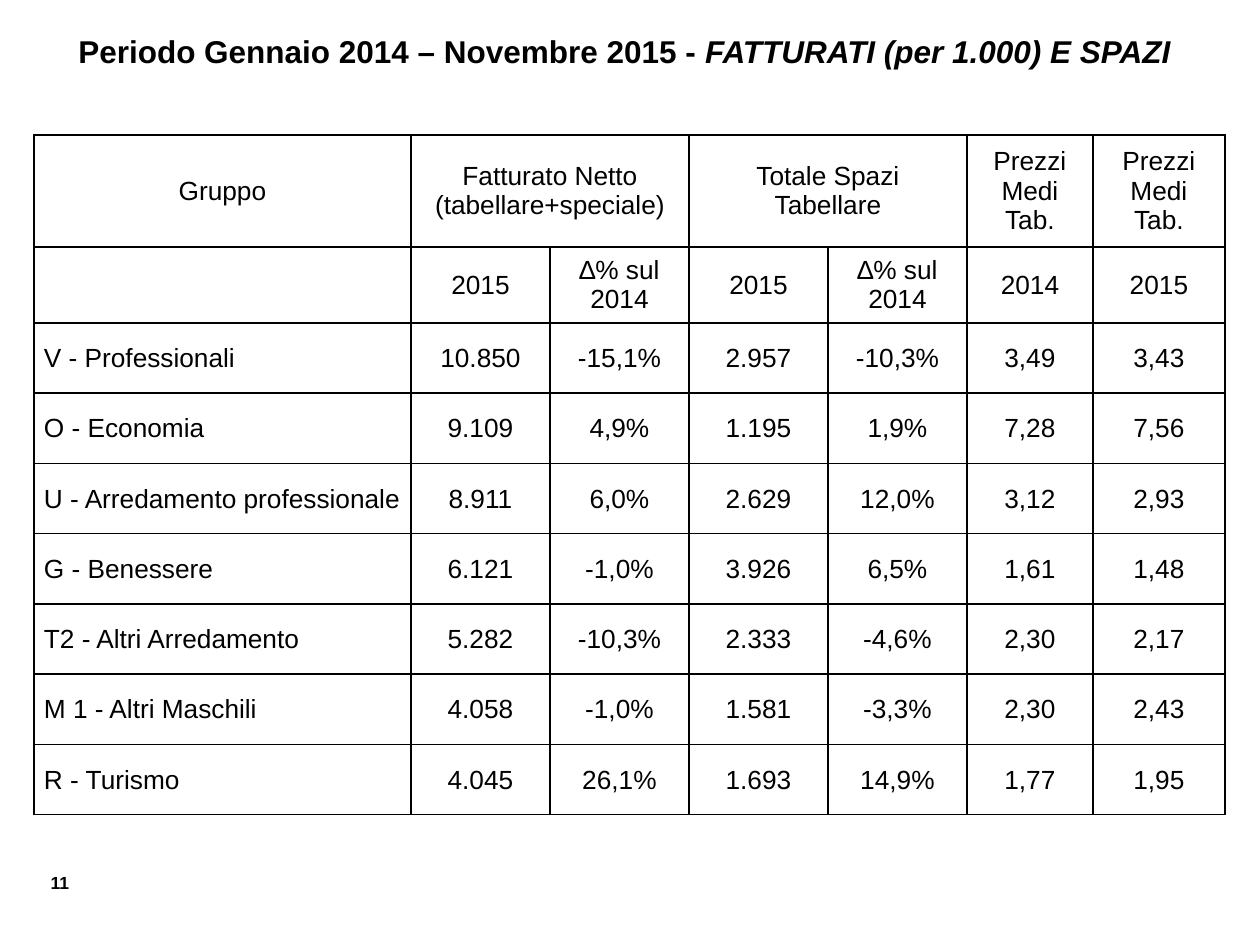
from dataclasses import dataclass

from lxml.etree import SubElement
from pptx import Presentation
from pptx.dml.color import RGBColor
from pptx.enum.text import MSO_ANCHOR, PP_ALIGN
from pptx.oxml.ns import qn
from pptx.util import Emu, Pt

PX_PER_INCH = 126
SLIDE_SIZE = (1260, 945)
TITLE_BOX = (34, 26, 1181, 89)
TABLE_BOX = (34, 135, 1191, 680)
NUMBER_BOX = (24, 866, 58, 34)

COLUMN_WIDTHS = [377, 139, 139, 139, 139, 126, 132]
HEADER_HEIGHTS = [112, 76]
HEADERS = [
    ["Gruppo", "Fatturato Netto (tabellare+speciale)", "", "Totale Spazi Tabellare", "",
     "Prezzi Medi Tab.", "Prezzi Medi Tab."],
    ["", "2015", "∆% sul 2014", "2015", "∆% sul 2014", "2014", "2015"],
]
GROUPS = [
    ["V - Professionali", "10.850", "-15,1%", "2.957", "-10,3%", "3,49", "3,43"],
    ["O - Economia", "9.109", "4,9%", "1.195", "1,9%", "7,28", "7,56"],
    ["U - Arredamento professionale", "8.911", "6,0%", "2.629", "12,0%", "3,12", "2,93"],
    ["G - Benessere", "6.121", "-1,0%", "3.926", "6,5%", "1,61", "1,48"],
    ["T2 - Altri Arredamento", "5.282", "-10,3%", "2.333", "-4,6%", "2,30", "2,17"],
    ["M 1 - Altri Maschili", "4.058", "-1,0%", "1.581", "-3,3%", "2,30", "2,43"],
    ["R - Turismo", "4.045", "26,1%", "1.693", "14,9%", "1,77", "1,95"],
]
# Insets: left, top, right, bottom
WIDE_INSETS = (13, 6, 13, 6)
NAME_INSETS = (10, 1, 1, 0)
VALUE_INSETS = (1, 1, 1, 0)


@dataclass(frozen=True)
class Theme:
    font: str = "Arial"
    ink: str = "000000"
    title_size: int = 18
    table_size: int = 15
    number_size: int = 10
    border_width: int = 1


THEME = Theme()


def px(length):
    return Emu(round(length * 914400 / PX_PER_INCH))


def set_attributes(target, values):
    for name, value in values.items():
        setattr(target, name, value)


def margins(insets):
    names = ("margin_left", "margin_top", "margin_right", "margin_bottom")
    return dict(zip(names, map(px, insets)))


def style_font(font, size, **extra):
    set_attributes(font, {"name": THEME.font, "size": Pt(size), **extra})
    font.color.rgb = RGBColor.from_string(THEME.ink)


def add_text(slide, box, runs, size, alignment):
    """Add one paragraph from (text, italic) runs, all in bold."""
    frame = slide.shapes.add_textbox(*map(px, box)).text_frame
    set_attributes(frame, {"word_wrap": True, **margins(WIDE_INSETS)})
    paragraph = frame.paragraphs[0]
    paragraph.alignment = alignment
    for text, italic in runs:
        run = paragraph.add_run()
        run.text = text
        style_font(run.font, size, bold=True, italic=italic)


def add_borders(cell):
    properties = cell._tc.get_or_add_tcPr()
    for position, side in enumerate(("a:lnL", "a:lnR", "a:lnT", "a:lnB")):
        line = SubElement(properties, qn(side), w=str(Pt(THEME.border_width)))
        fill = SubElement(line, qn("a:solidFill"))
        SubElement(fill, qn("a:srgbClr"), val=THEME.ink)
        # Borders come before the fill in the cell properties
        properties.insert(position, line)


def fill_cell(cell, text, insets, alignment):
    cell.fill.background()
    add_borders(cell)
    set_attributes(cell, {"vertical_anchor": MSO_ANCHOR.MIDDLE, **margins(insets)})
    paragraph = cell.text_frame.paragraphs[0]
    paragraph.alignment = alignment
    style_font(paragraph.font, THEME.table_size)
    if text:
        run = paragraph.add_run()
        run.text = text
        style_font(run.font, THEME.table_size)


def add_revenue_table(slide, box):
    rows = HEADERS + GROUPS
    table = slide.shapes.add_table(len(rows), len(COLUMN_WIDTHS), *map(px, box)).table
    set_attributes(table, {"first_row": False, "horz_banding": False})

    # Grid: the group rows share the height left by the headers
    group_height = (box[3] - sum(HEADER_HEIGHTS)) / len(GROUPS)
    for column, width in zip(table.columns, COLUMN_WIDTHS):
        column.width = px(width)
    for row, height in zip(table.rows, HEADER_HEIGHTS + [group_height] * len(GROUPS)):
        row.height = px(height)

    # Cells
    for row_index, texts in enumerate(rows):
        for column_index, text in enumerate(texts):
            insets, alignment = VALUE_INSETS, PP_ALIGN.CENTER
            if row_index < len(HEADERS):
                insets = WIDE_INSETS
            elif column_index == 0:
                insets, alignment = NAME_INSETS, PP_ALIGN.LEFT
            fill_cell(table.cell(row_index, column_index), text, insets, alignment)

    # Headings that cover two columns
    for first in (1, 3):
        table.cell(0, first).merge(table.cell(0, first + 1))


def main():
    presentation = Presentation()
    width, height = map(px, SLIDE_SIZE)
    set_attributes(presentation, {"slide_width": width, "slide_height": height})
    slide = presentation.slides.add_slide(presentation.slide_layouts[6])

    # Page number, title and table
    add_text(slide, NUMBER_BOX, [("11", False)], THEME.number_size, PP_ALIGN.RIGHT)
    title = [("Periodo Gennaio 2014 – Novembre 2015 - ", False),
             ("FATTURATI (per 1.000) E SPAZI", True)]
    add_text(slide, TITLE_BOX, title, THEME.title_size, PP_ALIGN.CENTER)
    add_revenue_table(slide, TABLE_BOX)

    presentation.save("out.pptx")


if __name__ == "__main__":
    main()
